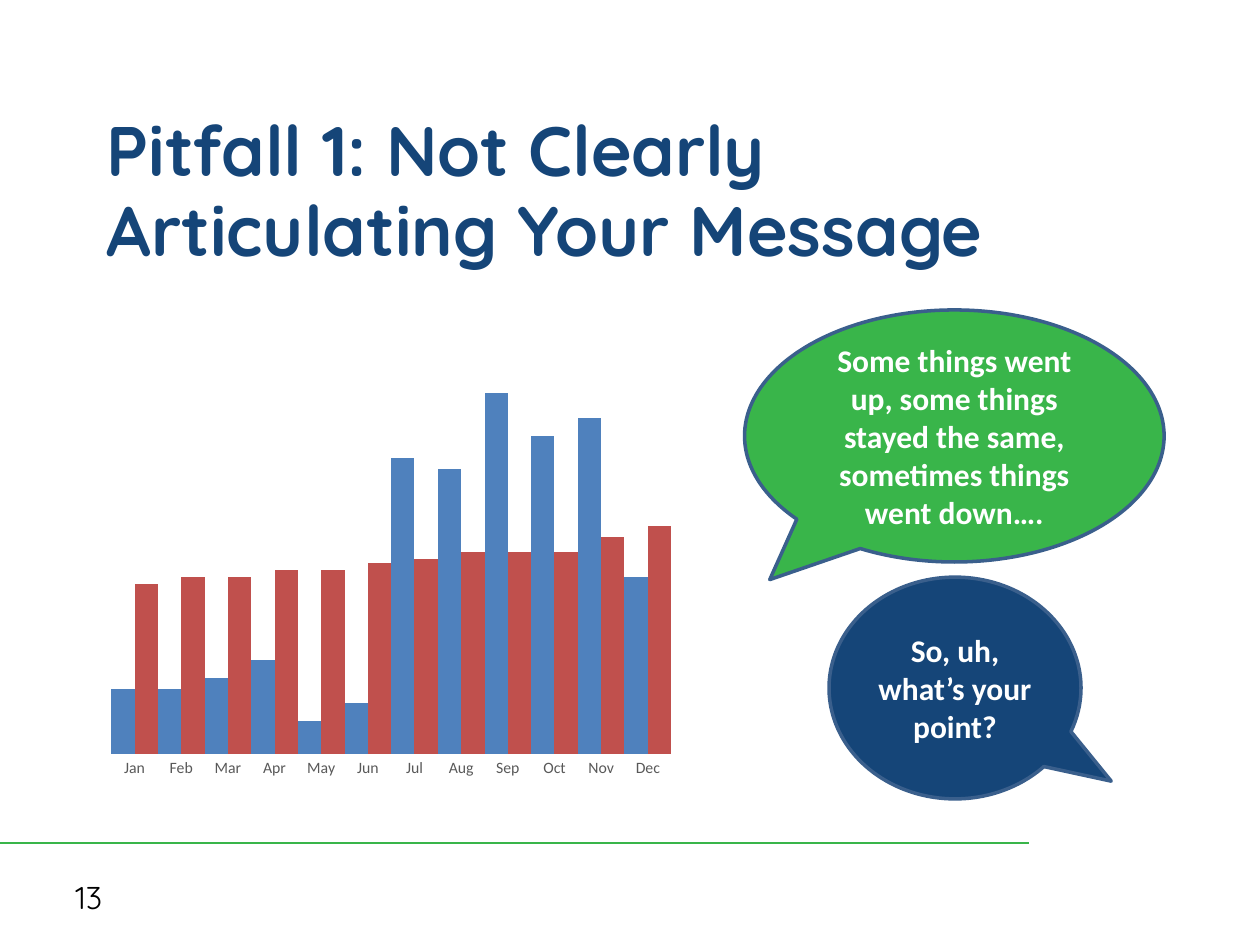
from dataclasses import dataclass

from lxml import etree
from pptx import Presentation
from pptx.chart.data import CategoryChartData
from pptx.dml.color import RGBColor
from pptx.enum.chart import XL_CHART_TYPE, XL_TICK_MARK
from pptx.enum.shapes import MSO_CONNECTOR, MSO_SHAPE
from pptx.enum.text import MSO_ANCHOR, PP_ALIGN
from pptx.oxml.ns import qn
from pptx.oxml import parse_xml
from pptx.slide import Slide
from pptx.text.text import TextFrame
from pptx.util import Inches, Pt

COLUMN_CLUSTERED = XL_CHART_TYPE.COLUMN_CLUSTERED
NO_TICKS = XL_TICK_MARK.NONE
STRAIGHT = MSO_CONNECTOR.STRAIGHT
ELLIPSE_CALLOUT = MSO_SHAPE.OVAL_CALLOUT
MIDDLE = MSO_ANCHOR.MIDDLE
LEFT, CENTER = PP_ALIGN.LEFT, PP_ALIGN.CENTER

NAVY = RGBColor(0x15, 0x45, 0x78)
GREEN = RGBColor(0x39, 0xB5, 0x4A)
OUTLINE = RGBColor(0x3A, 0x5F, 0x8C)
BLUE = RGBColor(0x4F, 0x81, 0xBD)
RED = RGBColor(0xC0, 0x50, 0x4D)
GRAY = RGBColor(0x59, 0x59, 0x59)
PALE_GRAY = RGBColor(0xD9, 0xD9, 0xD9)
BLACK = RGBColor(0, 0, 0)
WHITE = RGBColor(0xFF, 0xFF, 0xFF)

HEADING_FONT, BODY_FONT = "Quicksand", "Calibri"
SLIDE_WIDTH, SLIDE_HEIGHT = Inches(10), Inches(7.5)

MONTHS = ("Jan", "Feb", "Mar", "Apr", "May", "Jun",
          "Jul", "Aug", "Sep", "Oct", "Nov", "Dec")


@dataclass(frozen=True)
class Area:
    """A rectangle in percent of the slide's width and height."""
    left: float
    top: float
    width: float
    height: float

    def box(self) -> tuple[int, int, int, int]:
        return (across(self.left), down(self.top),
                across(self.width), down(self.height))


@dataclass(frozen=True)
class TextStyle:
    font: str
    size: int
    color: RGBColor
    bold: bool = False
    align: PP_ALIGN = LEFT
    line_spacing: float = 1.0


@dataclass(frozen=True)
class Callout:
    text: str
    area: Area
    tip: tuple[float, float]
    fill: RGBColor


@dataclass(frozen=True)
class Series:
    name: str
    values: tuple[int, ...]
    color: RGBColor


TITLE_STYLE = TextStyle(HEADING_FONT, 40, NAVY, bold=True, line_spacing=0.96)
NUMBER_STYLE = TextStyle(HEADING_FONT, 18, BLACK)
CALLOUT_STYLE = TextStyle(BODY_FONT, 18, WHITE, bold=True, align=CENTER)

CALLOUTS = (
    Callout("Some things went up, some things stayed the same, "
            "sometimes things went down….",
            Area(59.1, 32.8, 33.3, 26.67), (-0.44, 0.57), GREEN),
    Callout("So, uh, what’s your point?",
            Area(65.8, 61.07, 20, 23.47), (0.62, 0.42), NAVY),
)
SERIES = (
    Series("Series 1", (18, 18, 21, 26, 9, 14, 82, 79, 100, 88, 93, 49), BLUE),
    Series("Series 2", (47, 49, 49, 51, 51, 53, 54, 56, 56, 56, 60, 63), RED),
)
PLOT_LAYOUT = {"x": 0.02, "y": 0.06, "w": 0.96, "h": 0.86}


def across(percent: float) -> int:
    return round(SLIDE_WIDTH * percent / 100)


def down(percent: float) -> int:
    return round(SLIDE_HEIGHT * percent / 100)


def write(frame: TextFrame, text: str, style: TextStyle) -> None:
    frame.word_wrap = True
    frame.vertical_anchor = MIDDLE
    frame.text = text
    paragraph = frame.paragraphs[0]
    paragraph.alignment = style.align
    paragraph.line_spacing = style.line_spacing
    font = paragraph.runs[0].font
    font.name, font.size, font.bold = style.font, Pt(style.size), style.bold
    font.color.rgb = style.color


def add_text(slide: Slide, text: str, area: Area, style: TextStyle) -> None:
    write(slide.shapes.add_textbox(*area.box()).text_frame, text, style)


def add_footer_rule(slide: Slide) -> None:
    height = down(89.2)
    rule = slide.shapes.add_connector(STRAIGHT, 0, height, across(81.7), height)
    rule.line.color.rgb = GREEN
    rule.line.width = Pt(1.5)
    etree.SubElement(rule.line._get_or_add_ln().getparent(), qn("a:effectLst"))


def add_callout(slide: Slide, callout: Callout) -> None:
    bubble = slide.shapes.add_shape(ELLIPSE_CALLOUT, *callout.area.box())
    bubble.shadow.inherit = False
    bubble.adjustments[0], bubble.adjustments[1] = callout.tip
    bubble.fill.solid()
    bubble.fill.fore_color.rgb = callout.fill
    bubble.line.color.rgb = OUTLINE
    bubble.line.width = Pt(2)
    write(bubble.text_frame, callout.text, CALLOUT_STYLE)


def add_monthly_chart(slide: Slide, area: Area) -> None:
    data = CategoryChartData()
    data.categories = MONTHS
    for series in SERIES:
        data.add_series(series.name, series.values)
    chart = slide.shapes.add_chart(COLUMN_CLUSTERED, *area.box(), data).chart
    chart.has_title = chart.has_legend = False
    chart.font.name, chart.font.size = BODY_FONT, Pt(10)
    chart.font.color.rgb = BLACK

    value_axis = chart.value_axis
    value_axis.visible = value_axis.has_major_gridlines = False
    value_axis.minimum_scale, value_axis.maximum_scale = 0, 100

    month_axis = chart.category_axis
    month_axis.major_tick_mark = NO_TICKS
    month_axis.format.line.color.rgb = PALE_GRAY
    month_axis.format.line.width = Pt(0.75)
    labels = month_axis.tick_labels.font
    labels.name, labels.size = BODY_FONT, Pt(9)
    labels.color.rgb = GRAY

    plot = chart.plots[0]
    plot.gap_width = plot.overlap = 0
    plot.vary_by_categories = False
    for drawn, series in zip(plot.series, SERIES):
        drawn.format.fill.solid()
        drawn.format.fill.fore_color.rgb = series.color
    fix_plot_layout(chart._chartSpace.chart.plotArea)


def fix_plot_layout(plot_area: etree._Element) -> None:
    """Pin the inner plot so that the bars fill the chart's frame."""
    for automatic in plot_area.findall(qn("c:layout")):
        plot_area.remove(automatic)
    modes = '<c:xMode val="edge"/><c:yMode val="edge"/>'
    shares = "".join(f'<c:{key} val="{share}"/>'
                     for key, share in PLOT_LAYOUT.items())
    plot_area.insert(0, parse_xml(
        '<c:layout xmlns:c='
        '"http://schemas.openxmlformats.org/drawingml/2006/chart">'
        f'<c:manualLayout><c:layoutTarget val="inner"/>{modes}{shares}'
        '</c:manualLayout></c:layout>'))


def main() -> None:
    presentation = Presentation()
    presentation.slide_width = SLIDE_WIDTH
    presentation.slide_height = SLIDE_HEIGHT
    slide = presentation.slides.add_slide(presentation.slide_layouts[6])
    add_footer_rule(slide)
    add_text(slide, "13", Area(5, 92.27, 23.3, 5.33), NUMBER_STYLE)
    add_text(slide, "Pitfall 1: Not Clearly Articulating Your Message",
             Area(7.5, 10.4, 85, 19.87), TITLE_STYLE)
    for callout in CALLOUTS:
        add_callout(slide, callout)
    add_monthly_chart(slide, Area(7.9, 38.93, 46.3, 44.4))
    presentation.save("out.pptx")


if __name__ == "__main__":
    main()
